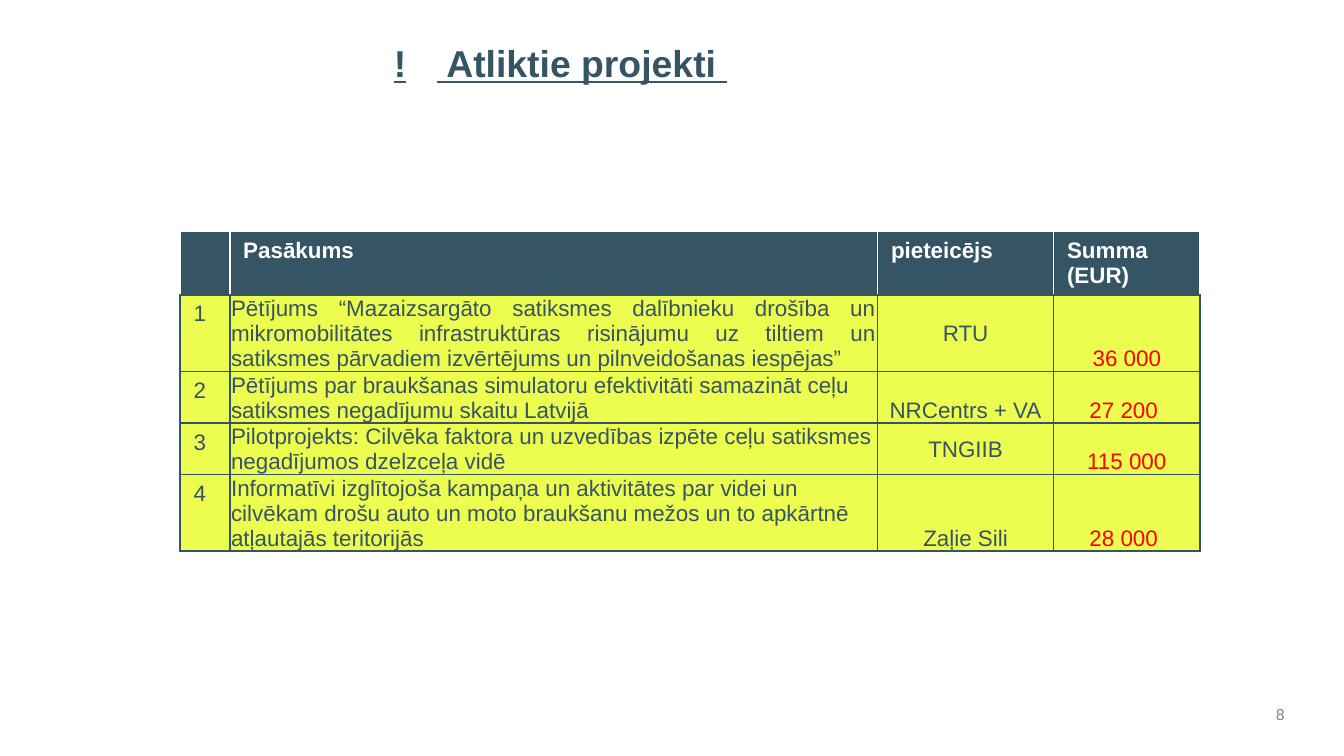
"""Builds the slide listing postponed projects."""
from lxml import etree
from pptx import Presentation
from pptx.dml.color import RGBColor
from pptx.enum.text import MSO_ANCHOR, PP_ALIGN
from pptx.oxml.ns import qn
from pptx.util import Pt

TOP, MIDDLE, BOTTOM = MSO_ANCHOR.TOP, MSO_ANCHOR.MIDDLE, MSO_ANCHOR.BOTTOM
LEFT, CENTER, RIGHT, JUSTIFY = PP_ALIGN.LEFT, PP_ALIGN.CENTER, PP_ALIGN.RIGHT, PP_ALIGN.JUSTIFY
COLORS = {"slate": "355464", "lime": "ECFD4F", "red": "FF0000", "white": "FFFFFF", "gray": "898989"}


def style(font, size, color, bold=False, name="Arial"):
    """Sets the size, colour, weight and typeface of a font."""
    font.size, font.bold, font.name = Pt(size), bold, name
    font.color.rgb = RGBColor.from_string(COLORS[color])


def add_borders(cell, sides):
    """Draws thin slate lines on the given sides of a cell."""
    properties = cell._tc.get_or_add_tcPr()
    for index, side in enumerate(sides):
        line = etree.Element(qn(f"a:ln{side}"), w=str(Pt(1)))
        fill = etree.SubElement(line, qn("a:solidFill"))
        etree.SubElement(fill, qn("a:srgbClr"), val=COLORS["slate"])
        properties.insert(index, line)


deck = Presentation()
deck.slide_width, deck.slide_height = Pt(720), Pt(405)
page = deck.slides.add_slide(deck.slide_layouts[5])

title = page.shapes.title
title.left, title.top, title.width, title.height = Pt(203.76), Pt(18), Pt(480), Pt(62.6)
frame = title.text_frame
frame.vertical_anchor = TOP
para = frame.paragraphs[0]
para.alignment = LEFT
tabs = etree.SubElement(para._p.get_or_add_pPr(), qn("a:tabLst"))
etree.SubElement(tabs, qn("a:tab"), pos=str(Pt(23.3)), algn="l")
for text, underlined in [("!", True), ("\t", False), (" Atliktie projekti ", True)]:
    span = para.add_run()
    span.text = text
    style(span.font, 20, "slate", bold=True)
    span.font.underline = underlined

headers = ["", "Pasākums", "pieteicējs", "Summa\n(EUR)"]
projects = [
    ("Pētījums “Mazaizsargāto satiksmes dalībnieku drošība un mikromobilitātes infrastruktūras "
     "risinājumu uz tiltiem un satiksmes pārvadiem izvērtējums un pilnveidošanas iespējas”",
     "RTU", "36 000", JUSTIFY, MIDDLE, MIDDLE),
    ("Pētījums par braukšanas simulatoru efektivitāti samazināt ceļu satiksmes negadījumu skaitu Latvijā",
     "NRCentrs + VA", "27 200 ", LEFT, BOTTOM, BOTTOM),
    ("Pilotprojekts: Cilvēka faktora un uzvedības izpēte ceļu satiksmes negadījumos dzelzceļa vidē",
     "TNGIIB", "115 000", LEFT, MIDDLE, MIDDLE),
    ("Informatīvi izglītojoša kampaņa un aktivitātes par videi un cilvēkam drošu auto un moto "
     "braukšanu mežos un to apkārtnē atļautajās teritorijās",
     "Zaļie Sili", "28 000 ", LEFT, BOTTOM, BOTTOM),
]
widths = [26.64, 347.04, 94.32, 78.48]
heights = [33.75, 41.2, 27.6, 27.6, 40.9]
table = page.shapes.add_table(
    len(heights), len(widths), Pt(96.48), Pt(123.84), Pt(sum(widths)), Pt(sum(heights))).table
for column, width in zip(table.columns, widths):
    column.width = Pt(width)
for row, height in zip(table.rows, heights):
    row.height = Pt(height)

rows = [[(text, LEFT, TOP, "white") for text in headers]]
for number, (name, applicant, amount, align, name_anchor, applicant_anchor) in enumerate(projects, 1):
    rows.append([
        (str(number), LEFT, TOP, "slate"),
        (name, align, name_anchor, "slate"),
        (applicant, CENTER, applicant_anchor, "slate"),
        (amount, CENTER, BOTTOM, "red"),
    ])

for row_index, row in enumerate(rows):
    is_header = row_index == 0
    for column_index, (text, align, anchor, color) in enumerate(row):
        cell = table.cell(row_index, column_index)
        cell.text_frame.text = text
        cell.vertical_anchor = anchor
        cell.fill.solid()
        cell.fill.fore_color.rgb = RGBColor.from_string(COLORS["slate" if is_header else "lime"])
        add_borders(cell, "B" if is_header else "LRTB")
        if not is_header and column_index > 0:
            cell.margin_left = cell.margin_right = cell.margin_top = Pt(0.7)
            cell.margin_bottom = 0
        for para in cell.text_frame.paragraphs:
            para.alignment = align
            style(para.font, 12, color, bold=is_header)
            for span in para.runs:
                style(span.font, 12, color, bold=is_header)

box = page.shapes.add_textbox(Pt(671.76), Pt(373.68), Pt(23.76), Pt(18))
frame = box.text_frame
frame.word_wrap = True
frame.vertical_anchor = MIDDLE
frame.text = "8"
para = frame.paragraphs[0]
para.alignment = RIGHT
style(para.runs[0].font, 8, "gray", name="DejaVu Sans")

deck.save("out.pptx")
